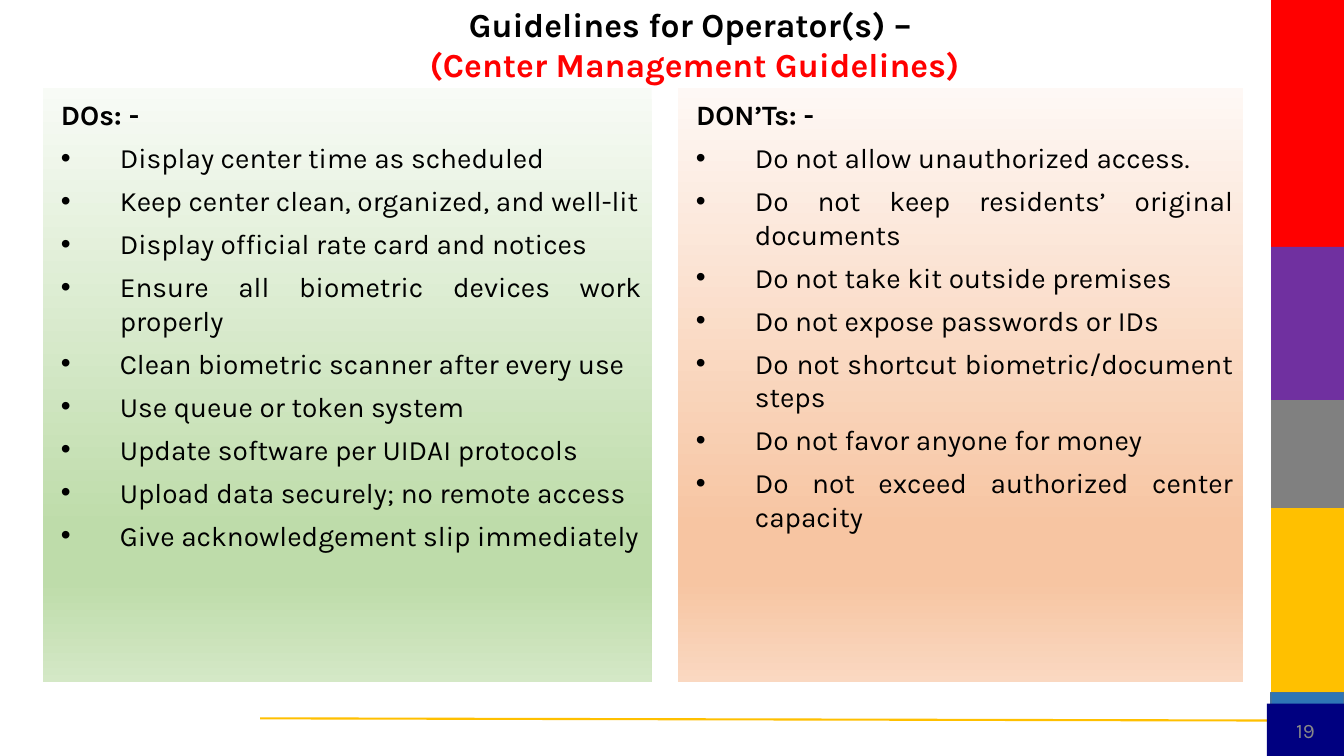
import pptx
import pptx.util
import pptx.dml.color
import pptx.enum.shapes
import pptx.enum.text
import pptx.oxml
import pptx.oxml.ns

Pt = pptx.util.Pt
ALIGN = pptx.enum.text.PP_ALIGN
ANCHOR = pptx.enum.text.MSO_ANCHOR
RECTANGLE = pptx.enum.shapes.MSO_SHAPE.RECTANGLE
STRAIGHT = pptx.enum.shapes.MSO_CONNECTOR.STRAIGHT

SIDEBAR = [
    (362.9, 177.1, "FFC000", None),
    (494.6, 43.9, "2E75B6", "43739E"),
    (0, 179.3, "FF0000", None),
    (176.4, 109.4, "7030A0", None),
    (285.8, 77.1, "808080", None),
]
DOS = [
    "Display center time as scheduled",
    "Keep center clean, organized, and well-lit",
    "Display official rate card and notices",
    "Ensure all biometric devices work properly",
    "Clean biometric scanner after every use",
    "Use queue or token system",
    "Update software per UIDAI protocols",
    "Upload data securely; no remote access",
    "Give acknowledgement slip immediately",
]
DONTS = [
    "Do not allow unauthorized access.",
    "Do not keep residents’ original documents",
    "Do not take kit outside premises",
    "Do not expose passwords or IDs",
    "Do not shortcut biometric/document steps",
    "Do not favor anyone for money",
    "Do not exceed authorized center capacity",
]


def color(value):
    return pptx.dml.color.RGBColor.from_string(value)


def element(xml):
    namespace = pptx.oxml.ns.nsdecls("a")
    return pptx.oxml.parse_xml(xml.replace("NS", namespace, 1))


def write(paragraph, text, size=20, bold=False, ink="000000", align=ALIGN.CENTER,
          before=0, margin=0, indent=0, bullet=None):
    paragraph.alignment = align
    paragraph.space_before = Pt(before)
    properties = paragraph._p.get_or_add_pPr()
    properties.set("marL", str(Pt(margin)))
    properties.set("indent", str(Pt(indent)))
    if bullet:
        properties.append(element(f'<a:buClr NS><a:srgbClr val="{ink}"/></a:buClr>'))
        properties.append(element('<a:buFont NS typeface="Arial"/>'))
        properties.append(element(f'<a:buChar NS char="{bullet}"/>'))
    run = paragraph.add_run()
    run.text = text
    run.font.name = "Karla"
    run.font.size = Pt(size)
    run.font.bold = bold
    run.font.color.rgb = color(ink)


class Guidelines:
    heading = {"size": 24, "bold": True}
    item = {"align": ALIGN.JUSTIFY, "before": 6.7, "margin": 48, "indent": -42, "bullet": "•"}

    def __init__(self, slide):
        self.shapes = slide.shapes

    def frame(self, shape, anchor, side=7.2, top=7.2):
        frame = shape.text_frame
        frame.word_wrap = True
        frame.vertical_anchor = anchor
        frame.margin_left = frame.margin_right = Pt(side)
        frame.margin_top = frame.margin_bottom = Pt(top)
        return frame

    def block(self, left, top, width, height, fill=None, outline=None):
        block = self.shapes.add_shape(RECTANGLE, Pt(left), Pt(top), Pt(width), Pt(height))
        block.shadow.inherit = False
        if fill:
            block.fill.solid()
            block.fill.fore_color.rgb = color(fill)
        if outline:
            block.line.color.rgb = color(outline)
            block.line.width = Pt(1)
        else:
            block.line.fill.background()
        return block

    def rule(self, x1, y1, x2, y2, ink, width):
        rule = self.shapes.add_connector(STRAIGHT, Pt(x1), Pt(y1), Pt(x2), Pt(y2))
        rule.line.color.rgb = color(ink)
        rule.line.width = Pt(width)
        rule._element.spPr.append(element("<a:effectLst NS/>"))

    def title(self, first, second):
        box = self.shapes.add_textbox(Pt(104.4), Pt(10.1), Pt(783.4), Pt(43.2))
        paragraph = self.frame(box, ANCHOR.MIDDLE).paragraphs[0]
        write(paragraph, first, **self.heading)
        paragraph.add_line_break()
        write(paragraph, second, ink="FF0000", **self.heading)

    def panel(self, left, width, label, items, tints):
        panel = self.block(left, 62.6, width, 424.8)
        stops = "".join(
            f'<a:gs pos="{place * 1000}"><a:srgbClr val="{tint}"/></a:gs>'
            for place, tint in zip((0, 74, 83, 100), tints))
        properties = panel._element.spPr
        properties.insert(2, element(
            f'<a:gradFill NS rotWithShape="1"><a:gsLst>{stops}</a:gsLst>'
            '<a:lin ang="5400000" scaled="0"/></a:gradFill>'))
        frame = self.frame(panel, ANCHOR.TOP)
        write(frame.paragraphs[0], label, bold=True, align=ALIGN.JUSTIFY, margin=6)
        for text in items:
            write(frame.add_paragraph(), text, **self.item)

    def page_number(self, number):
        badge = self.block(905, 502.6, 55, 37.4, "000080")
        frame = self.frame(badge, ANCHOR.MIDDLE, top=3.6)
        write(frame.paragraphs[0], number, size=14.7, ink="888888")


def main():
    deck = pptx.Presentation()
    deck.slide_width, deck.slide_height = Pt(960), Pt(540)
    page = Guidelines(deck.slides.add_slide(deck.slide_layouts[6]))
    page.rule(185.8, 513.1, 960, 514.8, "FFC000", 1.5)
    for top, height, fill, outline in SIDEBAR:
        page.block(908, top, 52, height, fill, outline)
    page.title("Guidelines for Operator(s) – ", "(Center Management Guidelines)")
    page.panel(30.5, 435, "DOs: -", DOS, ("F8FBF6", "BEDCAA", "BEDCAA", "D4E8C6"))
    page.page_number("19")
    page.panel(484.1, 404, "DON’Ts: -", DONTS, ("FEF8F5", "F7C5A2", "F7C5A2", "FAD8C1"))
    deck.save("out.pptx")


if __name__ == "__main__":
    main()
